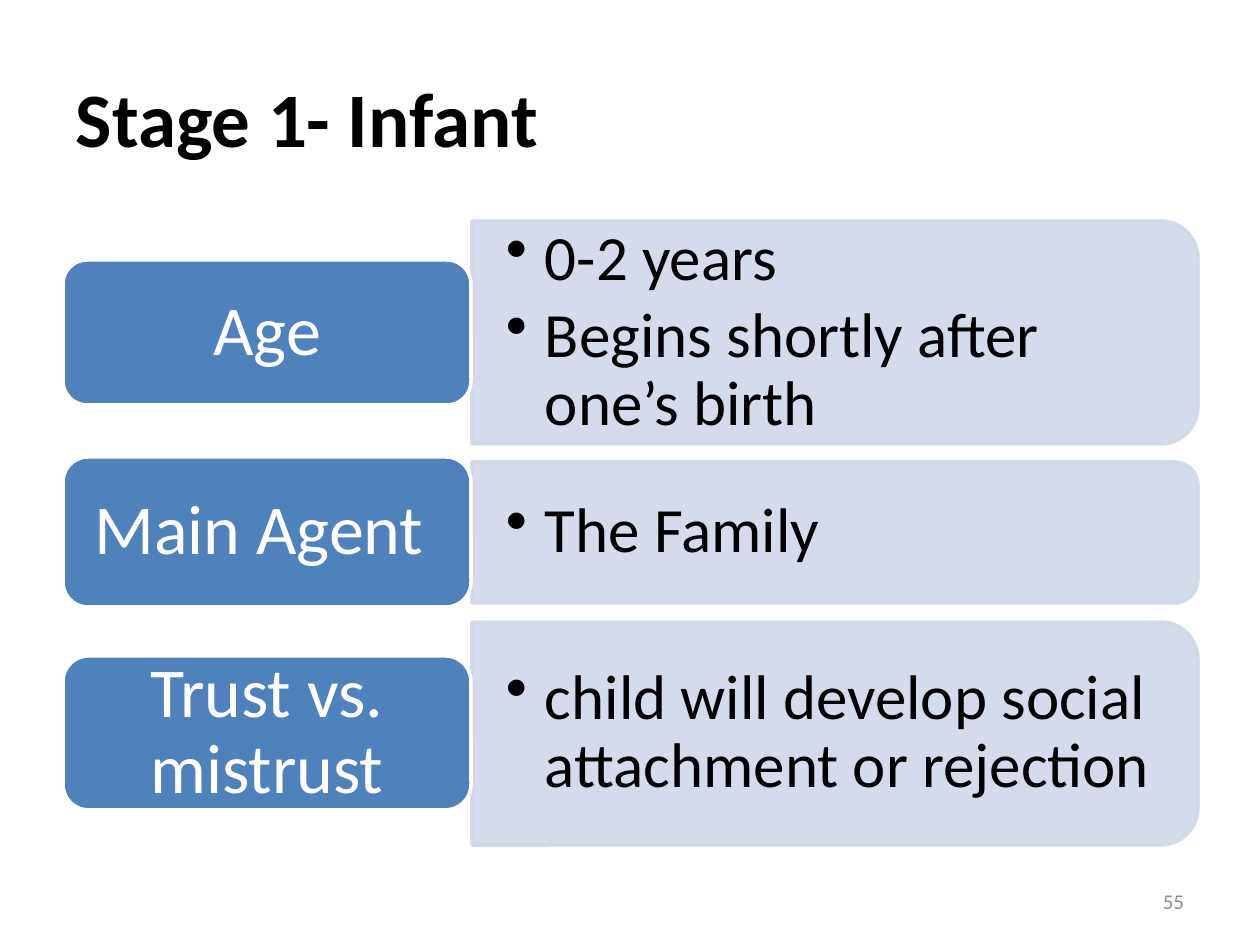
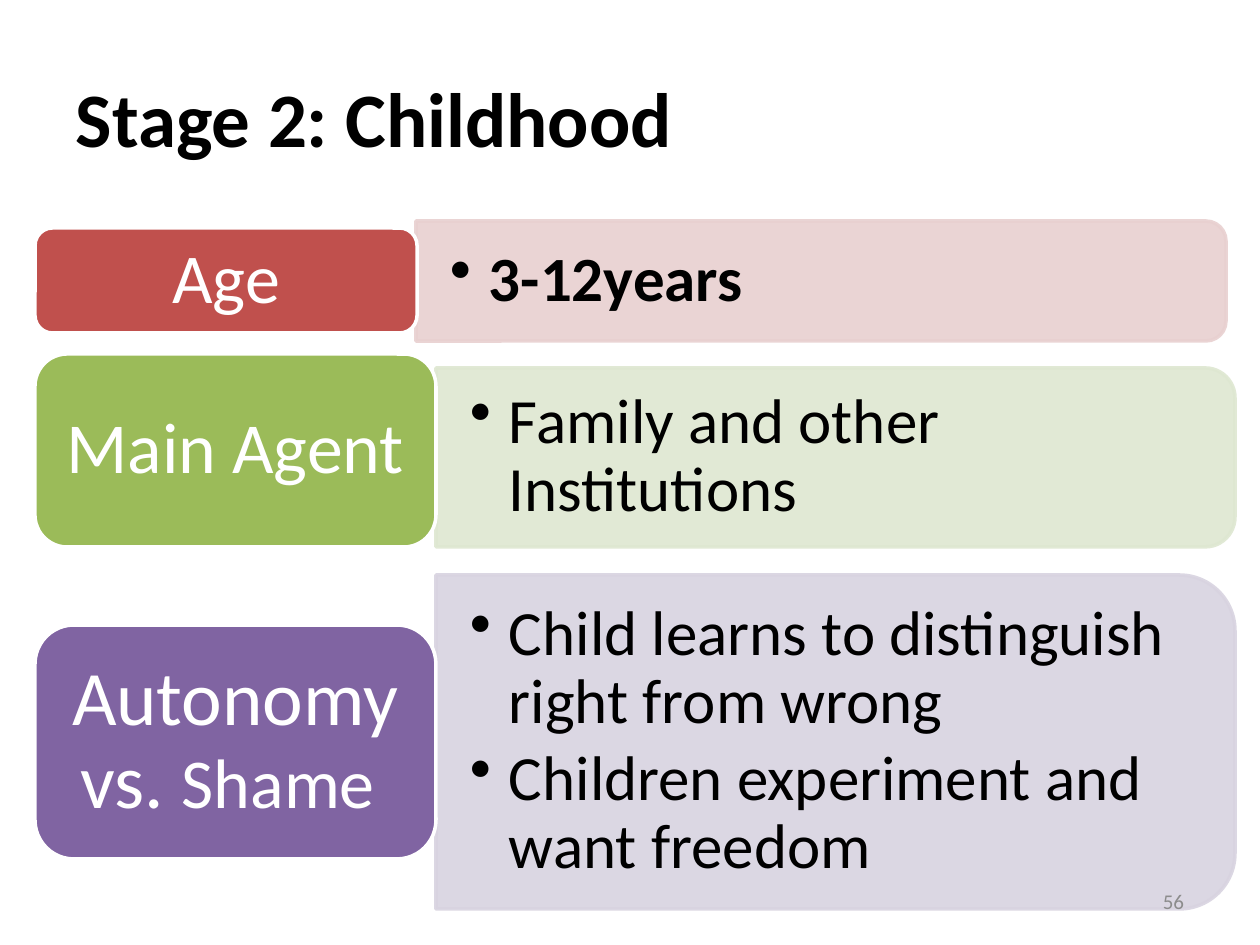
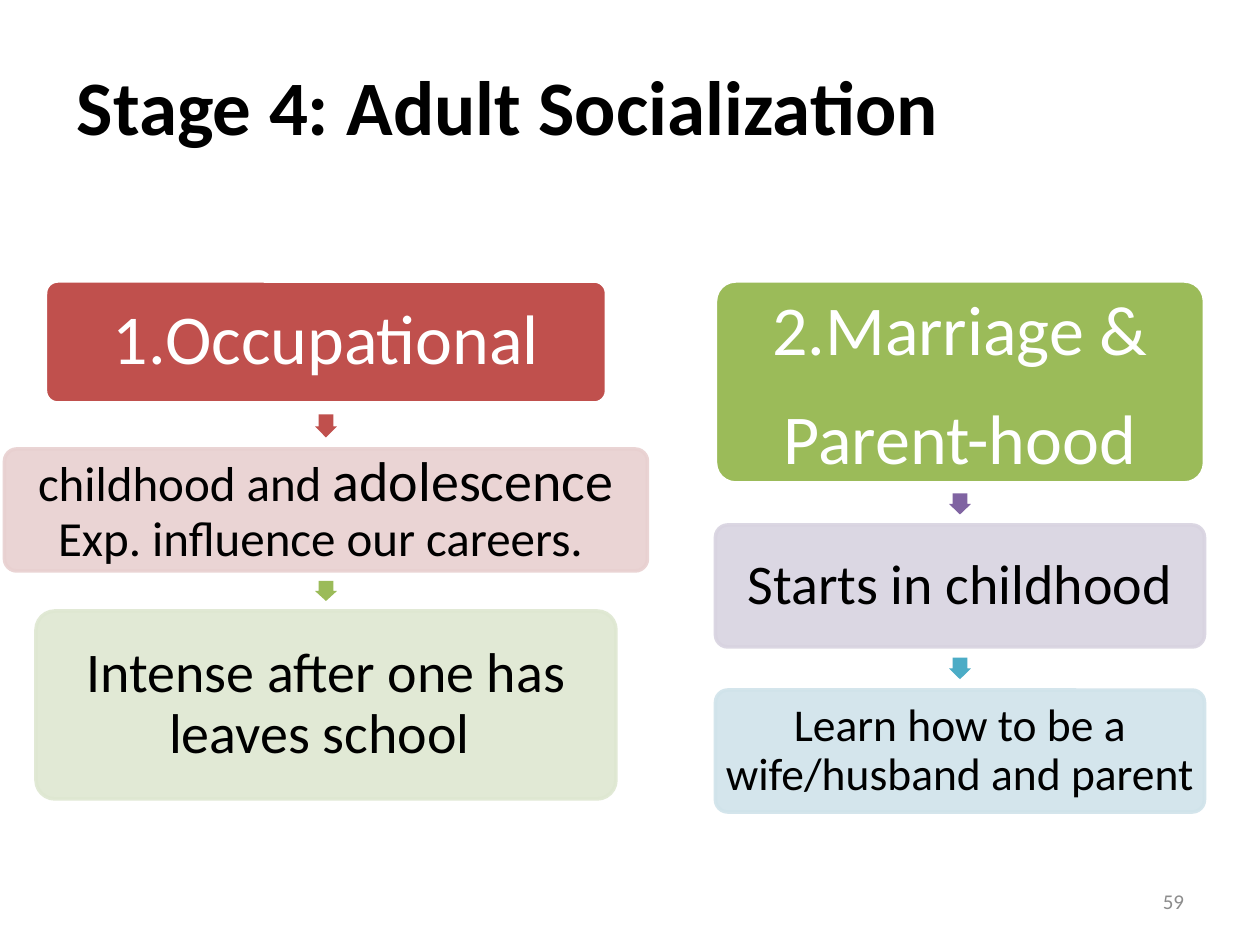
from lxml import etree
from pptx import Presentation
from pptx import util as u
from pptx.dml.color import RGBColor
from pptx.enum import shapes, text
from pptx.oxml.ns import qn

PX = 914400 / 126
FONT = "Calibri"
COLORS = {
    "black": "000000", "white": "FFFFFF", "grey": "8C8C8C",
    "blue": "4F81BD", "red": "C0504D", "green": "9BBB59",
    "purple": "8064A2", "teal": "4BACC6",
    "pale blue": "D0D8E8", "pale red": "E8D0D0", "pale green": "DEE7D1",
    "pale purple": "D8D3E0", "pale teal": "D0E3EA",
}
ALIGN = text.PP_ALIGN
CORNER_INSET = 0.29  # share of a corner radius that text keeps clear

# Each row: colour, label runs, label (left, top, width, height),
# bullets, bold bullets, panel (left, top, width, height)
ROW_SLIDES = [
    {"title": "Stage 1- Infant", "number": 55, "rows": [
        ("blue", [("Age", 40)], (63, 260, 408, 145),
         ["0-2 years", "Begins shortly after one’s birth"], False, (472, 221, 726, 223)),
        ("blue", [("Main Agent ", 40)], (63, 457, 408, 150),
         ["The Family"], False, (472, 462, 726, 141)),
        ("blue", [("Trust vs. mistrust", 40)], (63, 656, 408, 154),
         ["child will develop social attachment or rejection"], False, (472, 622, 726, 223)),
    ]},
    {"title": "Stage 2: Childhood", "number": 56, "rows": [
        ("red", [("Age", 40)], (35, 228, 382, 105),
         ["3-12years"], True, (416, 221, 810, 120)),
        ("green", [("Main Agent", 41)], (35, 354, 401, 193),
         ["Family and other Institutions"], False, (436, 368, 799, 179)),
        ("purple", [("Autonomy vs. ", 44), ("Shame ", 40)], (35, 625, 401, 234),
         ["Child learns to distinguish right from wrong",
          "Children experiment and want freedom"], False, (436, 575, 799, 334)),
    ]},
]

# Each step: fill, width, top, height, paragraphs of runs
FLOW_SLIDE = {"title": "Stage 4: Adult Socialization", "number": 59, "columns": [
    {"center": 326, "arrows": ["red", "green"], "steps": [
        ("red", 561, 281, 122, [[("1.Occupational", 40)]]),
        ("pale red", 643, 449, 122, [[("childhood and ", 28), ("adolescence", 32),
                                      (" Exp. influence our careers. ", 28)]]),
        ("pale green", 580, 611, 188, [[("Intense after one has leaves school ", 32)]]),
    ]},
    {"center": 960, "arrows": ["purple", "teal"], "steps": [
        ("green", 489, 281, 202, [[("2.Marriage &", 40)], [("Parent-hood", 40)]]),
        ("pale purple", 489, 525, 122, [[("Starts in childhood", 32)]]),
        ("pale teal", 489, 690, 122, [[("Learn how to be a wife/husband and parent ", 26)]]),
    ]},
]}


def px(length):
    return u.Emu(round(length * PX))


def rgb(name):
    return RGBColor.from_string(COLORS[name])


def write(shape, paragraphs, color, align, inset=(13, 6), bold=False,
          spacing=None, after=0, bullet=False):
    """Fill a shape with paragraphs, each a list of (text, size) runs."""
    frame = shape.text_frame
    frame.word_wrap = True
    frame.vertical_anchor = text.MSO_ANCHOR.MIDDLE
    frame.margin_left = frame.margin_right = px(inset[0])
    frame.margin_top = frame.margin_bottom = px(inset[1])
    for index, runs in enumerate(paragraphs):
        paragraph = frame.add_paragraph() if index else frame.paragraphs[0]
        paragraph.alignment = align
        if spacing:
            paragraph.line_spacing = spacing
        if after:
            paragraph.space_after = u.Pt(round(runs[0][1] * after))
        if bullet:
            properties = paragraph._p.get_or_add_pPr()
            properties.set("marL", str(px(39)))
            properties.set("indent", str(px(-39)))
            etree.SubElement(properties, qn("a:buChar")).set("char", "•")
        for words, size in runs:
            run = paragraph.add_run()
            run.text = words
            run.font.name = FONT
            run.font.size = u.Pt(size)
            run.font.bold = bold
            run.font.color.rgb = rgb(color)


def add_box(slide, kind, box, fill, line=None):
    shape = slide.shapes.add_shape(kind, *map(px, box))
    shape.shadow.inherit = False
    shape.fill.solid()
    shape.fill.fore_color.rgb = rgb(fill)
    if line:
        shape.line.color.rgb = rgb(line)
        shape.line.width = u.Pt(2)
    else:
        shape.line.fill.background()
    if fill.startswith("pale"):
        for color in shape.element.spPr.iter(qn("a:srgbClr")):
            etree.SubElement(color, qn("a:alpha")).set("val", "90000")
    return shape


def add_text(slide, box, *args, **options):
    write(slide.shapes.add_textbox(*map(px, box)), *args, **options)


def add_panel(slide, box, color, bullets, bold):
    """Panel rounded on its right side, with a bulleted list over it."""
    left, top, width, height = box
    turned = (left + (width - height) / 2, top + (height - width) / 2, height, width)
    panel = add_box(slide, shapes.MSO_SHAPE.ROUND_2_SAME_RECTANGLE, turned, color, color)
    panel.rotation = 90
    clear = height / 6 * CORNER_INSET
    add_text(slide, (left, top + clear, width - clear, height - 2 * clear),
             [[(bullet, 36)] for bullet in bullets], "black", ALIGN.LEFT,
             inset=(34, 18), bold=bold, spacing=0.9, after=0.15, bullet=True)


def add_row(slide, color, label, label_box, bullets, bold, panel_box):
    add_panel(slide, panel_box, "pale " + color, bullets, bold)
    shape = add_box(slide, shapes.MSO_SHAPE.ROUNDED_RECTANGLE, label_box, color, "white")
    write(shape, [label], "white", ALIGN.CENTER, inset=(21, 10), spacing=0.9, after=0.35)


def add_column(slide, center, arrows, steps):
    for fill, width, top, height, paragraphs in steps:
        pale = fill.startswith("pale")
        shape = add_box(slide, shapes.MSO_SHAPE.ROUNDED_RECTANGLE,
                        (center - width / 2, top, width, height),
                        fill, fill if pale else "white")
        shape.adjustments[0] = 0.1
        inset = 5 if pale else 8
        write(shape, paragraphs, "black" if pale else "white", ALIGN.CENTER,
              inset=(inset, inset), spacing=0.9 if len(paragraphs) == 1 else None, after=0.35)
    for color, above, below in zip(arrows, steps, steps[1:]):
        bottom = above[2] + above[3]
        gap = below[2] - bottom
        arrow = add_box(slide, shapes.MSO_SHAPE.DOWN_ARROW,
                        (center - 11, bottom + gap / 4, 22, gap / 2), color)
        arrow.adjustments[0] = 0.67
        arrow.adjustments[1] = 0.5


def add_slide(presentation, title, title_place=(63, 38)):
    slide = presentation.slides.add_slide(presentation.slide_layouts[6])
    add_text(slide, (*title_place, 1134, 157), [[(title, 44)]], "black",
             ALIGN.JUSTIFY, bold=True)
    return slide


def add_number(slide, number):
    add_text(slide, (903, 876, 294, 50), [[(str(number), 12)]], "grey", ALIGN.RIGHT)


def main():
    presentation = Presentation()
    presentation.slide_width, presentation.slide_height = px(1260), px(945)
    for content in ROW_SLIDES:
        slide = add_slide(presentation, content["title"])
        for row in content["rows"]:
            add_row(slide, *row)
        add_number(slide, content["number"])
    slide = add_slide(presentation, FLOW_SLIDE["title"], (64, 26))
    for column in FLOW_SLIDE["columns"]:
        add_column(slide, **column)
    add_number(slide, FLOW_SLIDE["number"])
    presentation.save("out.pptx")


if __name__ == "__main__":
    main()
